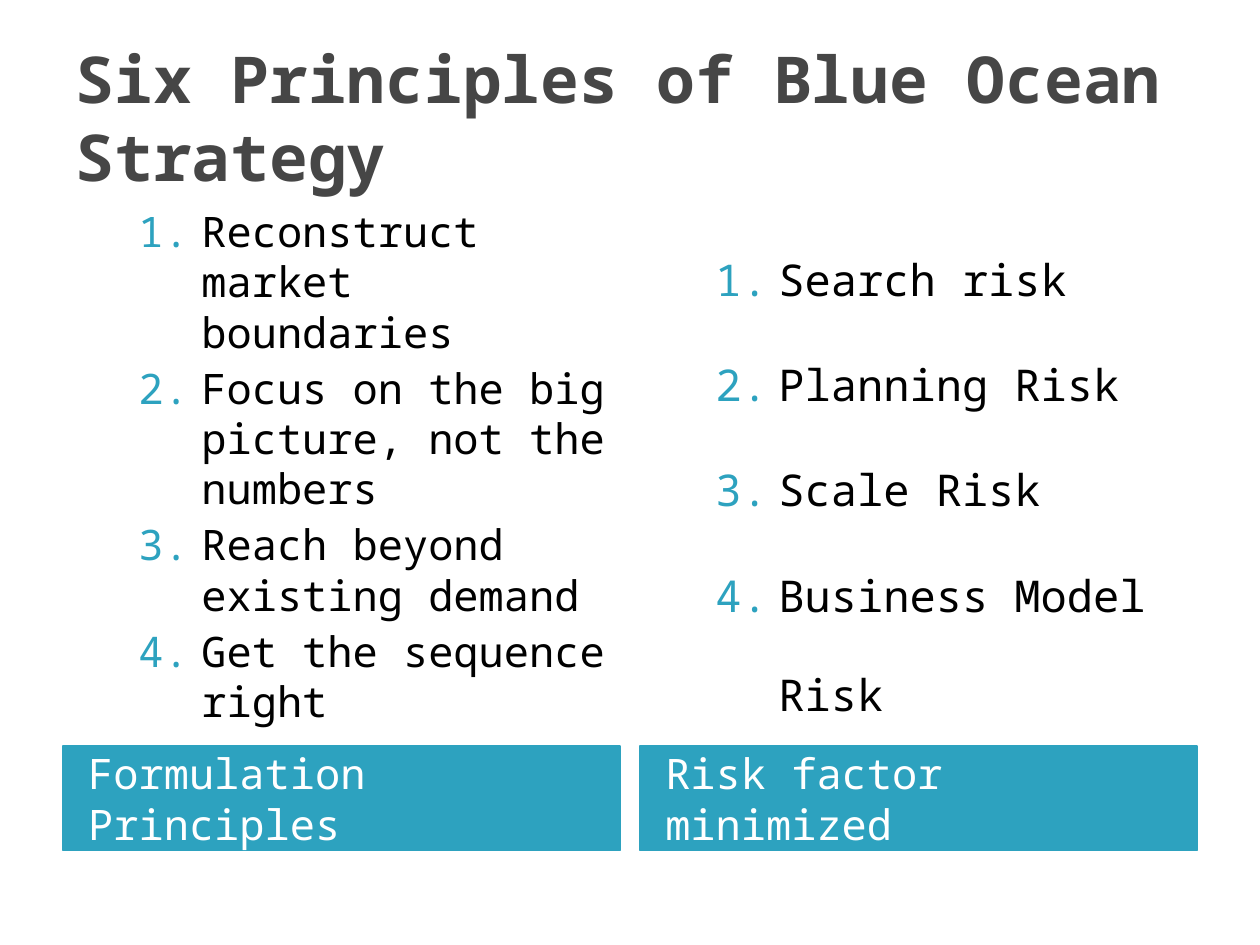
from dataclasses import dataclass

from lxml.etree import SubElement
from pptx import Presentation
from pptx.dml.color import RGBColor
from pptx.enum.shapes import MSO_SHAPE
from pptx.enum.text import MSO_ANCHOR as Anchor, MSO_AUTO_SIZE as AutoSize, PP_ALIGN as Align
from pptx.oxml.ns import qn
from pptx.util import Inches, Pt


@dataclass(frozen=True)
class Theme:
    font: str = "Noto Sans Mono"
    accent: str = "2DA2BF"
    title_color: str = "464646"
    text_color: str = "000000"
    label_color: str = "FFFFFF"
    title_size: float = 36.9
    label_size: float = 24


THEME = Theme()
MARGIN, GUTTER = 0.5, 0.16
SLIDE_WIDTH, SLIDE_HEIGHT = 10, 7.5
CONTENT_WIDTH = SLIDE_WIDTH - 2 * MARGIN
COLUMN_WIDTH = (CONTENT_WIDTH - GUTTER) / 2
LIST_TOP, LIST_HEIGHT = 1.58, 4.31
LABEL_TOP, LABEL_HEIGHT = 5.92, 0.83

COLUMNS = [
    dict(
        label="Formulation Principles",
        items=[
            "Reconstruct market boundaries",
            "Focus on the big picture, not the numbers",
            "Reach beyond existing demand",
            "Get the sequence right",
        ],
        size=24,
        line_spacing=1.0,
    ),
    dict(
        label="Risk factor minimized",
        items=["Search risk", "Planning Risk", "Scale Risk", "Business Model Risk"],
        size=25,
        line_spacing=1.9,
    ),
]


def column_box(column, top, height):
    left = MARGIN + column * (COLUMN_WIDTH + GUTTER)
    return [Inches(length) for length in (left, top, COLUMN_WIDTH, height)]


def write_text(paragraph, text, *, size, color, bold=False):
    paragraph.alignment = Align.LEFT
    run = paragraph.add_run()
    run.text = text
    run.font.name = THEME.font
    run.font.size = Pt(size)
    run.font.bold = bold
    run.font.color.rgb = RGBColor.from_string(color)


def number_paragraph(paragraph):
    """Give a paragraph an accent-coloured automatic number and hanging indent."""
    properties = paragraph._p.get_or_add_pPr()
    properties.set("marL", str(Inches(1)))
    properties.set("indent", str(Inches(-0.5)))
    bullet_color = SubElement(properties, qn("a:buClr"))
    SubElement(bullet_color, qn("a:srgbClr"), val=THEME.accent)
    SubElement(properties, qn("a:buFont"), typeface="+mj-lt")
    SubElement(properties, qn("a:buAutoNum"), type="arabicPeriod")


def set_title(slide, text):
    title = slide.shapes.title
    title.left, title.top = Inches(MARGIN), Inches(0.3)
    title.width, title.height = Inches(CONTENT_WIDTH), Inches(1.25)
    frame = title.text_frame
    frame.word_wrap = True
    frame.auto_size = AutoSize.NONE
    frame.vertical_anchor = Anchor.MIDDLE
    write_text(frame.paragraphs[0], text, size=THEME.title_size,
               color=THEME.title_color, bold=True)


def add_label(slide, column, text):
    shape = slide.shapes.add_shape(
        MSO_SHAPE.RECTANGLE, *column_box(column, LABEL_TOP, LABEL_HEIGHT))
    shape.shadow.inherit = False
    shape.fill.solid()
    shape.fill.fore_color.rgb = RGBColor.from_string(THEME.accent)
    shape.line.color.rgb = RGBColor.from_string(THEME.accent)
    shape.line.width = Pt(0.75)
    frame = shape.text_frame
    frame.word_wrap = True
    frame.vertical_anchor = Anchor.MIDDLE
    frame.margin_left = Inches(0.2)
    write_text(frame.paragraphs[0], text, size=THEME.label_size, color=THEME.label_color)


def add_numbered_list(slide, column, items, *, size, line_spacing):
    box = slide.shapes.add_textbox(*column_box(column, LIST_TOP, LIST_HEIGHT))
    frame = box.text_frame
    frame.word_wrap = True
    for index, item in enumerate(items):
        paragraph = frame.add_paragraph() if index else frame.paragraphs[0]
        number_paragraph(paragraph)
        paragraph.line_spacing = line_spacing
        paragraph.space_before = Pt(3.2 if index else 0)
        write_text(paragraph, item, size=size, color=THEME.text_color)


def main():
    presentation = Presentation()
    presentation.slide_width = Inches(SLIDE_WIDTH)
    presentation.slide_height = Inches(SLIDE_HEIGHT)
    title_only = presentation.slide_layouts[5]
    slide = presentation.slides.add_slide(title_only)
    set_title(slide, "Six Principles of Blue Ocean Strategy")
    for index, column in enumerate(COLUMNS):
        add_label(slide, index, column["label"])
        add_numbered_list(slide, index, column["items"], size=column["size"],
                          line_spacing=column["line_spacing"])
    presentation.save("out.pptx")


if __name__ == "__main__":
    main()
